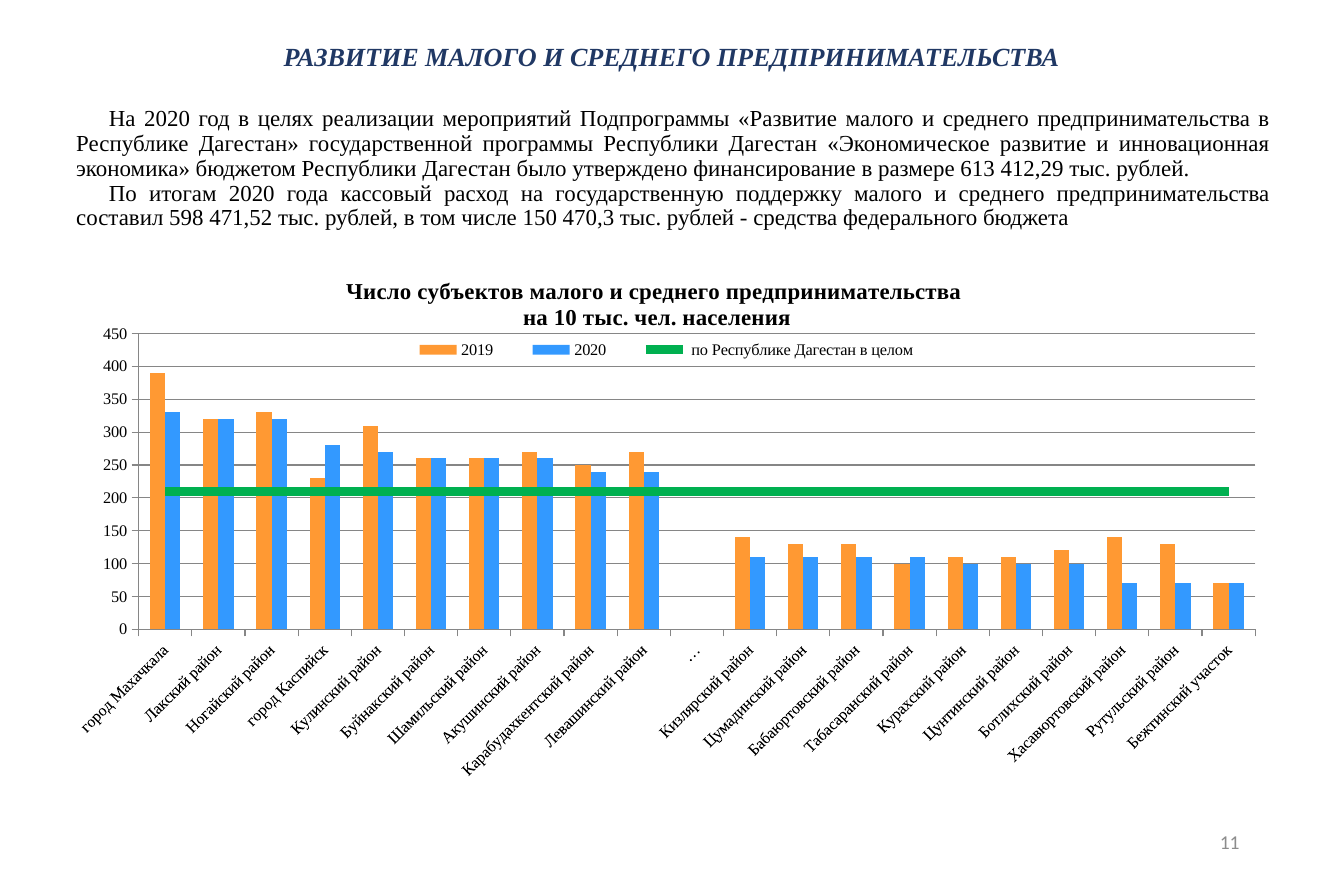
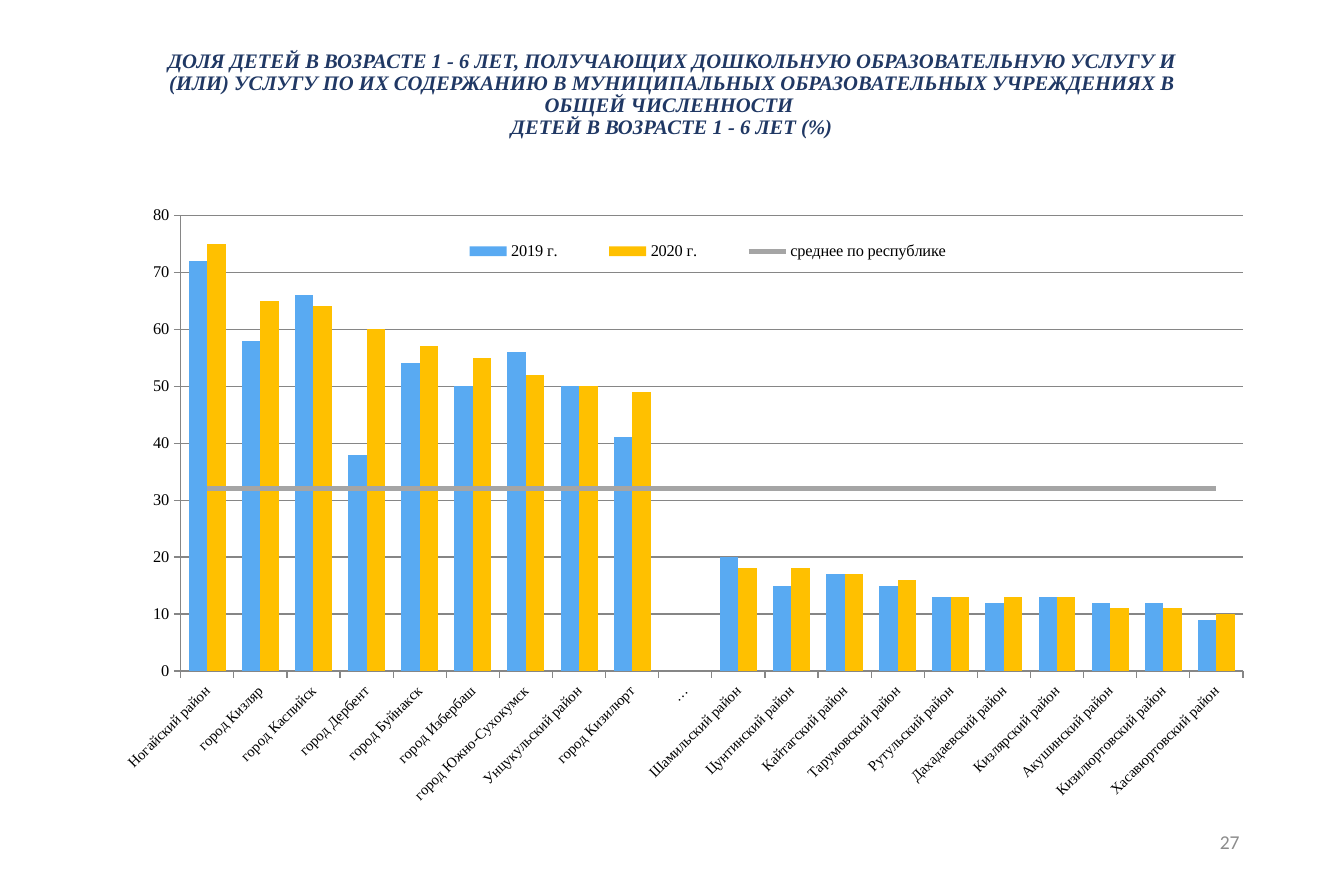
from pptx import Presentation
from pptx.chart.data import CategoryChartData
from pptx.dml.color import RGBColor
from pptx.enum.chart import XL_CHART_TYPE, XL_LEGEND_POSITION, XL_MARKER_STYLE, XL_TICK_MARK
from pptx.enum.text import MSO_ANCHOR, PP_ALIGN
from pptx.oxml import parse_xml
from pptx.oxml.ns import nsdecls
from pptx.util import Pt

# Shared look
SERIF, SANS = "Times New Roman", "Calibri"
NAVY, BLACK, GREY, GRID = "203864", "000000", "8C8C8C", "868686"
NUMBER_BOX = (580, 500.5, 185.5, 28.5)

# Content: boxes are left, top, width, height in points;
# plot and legend are left, top, width, height as shares of the chart
SLIDES = [
    {
        "number": "11",
        "title": ["РАЗВИТИЕ МАЛОГО И СРЕДНЕГО ПРЕДПРИНИМАТЕЛЬСТВА"],
        "title_box": (167, 16.5, 488, 38), "title_size": 16, "title_inset": 5,
        "body": [
            "На 2020 год в целях реализации мероприятий Подпрограммы «Развитие малого и среднего "
            "предпринимательства в Республике Дагестан» государственной программы Республики Дагестан "
            "«Экономическое развитие и инновационная экономика» бюджетом Республики Дагестан было "
            "утверждено финансирование в размере 613 412,29 тыс. рублей. ",
            "По итогам 2020 года кассовый расход на государственную поддержку малого и среднего "
            "предпринимательства составил 598 471,52 тыс. рублей, в том числе 150 470,3 тыс. рублей - "
            "средства федерального бюджета ",
        ],
        "chart": {
            "box": (34, 162.5, 747.5, 314), "plot": (0.068, 0.133, 0.914, 0.58),
            "legend": (0.27, 0.135, 0.46, 0.06),
            "heading": ["Число субъектов малого и среднего предпринимательства ",
                        "на 10 тыс. чел. населения"],
            "heading_at": (0.235, 0.014),
            "gap": 150, "top": 450, "step": 50, "label_size": 10, "line_width": 5.5,
            "colors": ["FF9933", "3399FF", "00B050"],
            "names": ["2019", "2020", " по Республике Дагестан в целом"],
            "average": 210,
            "rows": [
                ("город Махачкала", 390, 330), ("Лакский район", 320, 320),
                ("Ногайский район", 330, 320), ("город Каспийск", 230, 280),
                ("Кулинский район", 310, 270), ("Буйнакский район", 260, 260),
                ("Шамильский район", 260, 260), ("Акушинский район", 270, 260),
                ("Карабудахкентский район", 250, 240), ("Левашинский район", 270, 240),
                ("…", None, None),
                ("Кизлярский район", 140, 110), ("Цумадинский район", 130, 110),
                ("Бабаюртовский район", 130, 110), ("Табасаранский район", 100, 110),
                ("Курахский район", 110, 100), ("Цунтинский район", 110, 100),
                ("Ботлихский район", 120, 100), ("Хасавюртовский район", 140, 70),
                ("Рутульский район", 130, 70), ("Бежтинский участок", 70, 70),
            ],
        },
    },
    {
        "number": "27",
        "title": ["ДОЛЯ ДЕТЕЙ В ВОЗРАСТЕ 1 - 6 ЛЕТ, ПОЛУЧАЮЩИХ ДОШКОЛЬНУЮ ОБРАЗОВАТЕЛЬНУЮ УСЛУГУ И "
                  "(ИЛИ) УСЛУГУ ПО ИХ СОДЕРЖАНИЮ В МУНИЦИПАЛЬНЫХ ОБРАЗОВАТЕЛЬНЫХ УЧРЕЖДЕНИЯХ В "
                  "ОБЩЕЙ ЧИСЛЕННОСТИ ",
                  "ДЕТЕЙ В ВОЗРАСТЕ 1 - 6 ЛЕТ (%)"],
        "title_box": (88.5, 28, 644.5, 60), "title_size": 12.6, "title_inset": 7.2,
        "body": [],
        "chart": {
            "box": (49, 119, 724.5, 396), "plot": (0.085, 0.032, 0.897, 0.704),
            "legend": (0.29, 0.06, 0.48, 0.055),
            "heading": [], "heading_at": None,
            "gap": 88, "top": 80, "step": 10, "label_size": 9, "line_width": 3,
            "colors": ["59AAF2", "FFC000", "A5A5A5"],
            "names": ["2019 г.", "2020 г.", "среднее по республике"],
            "average": 32,
            "rows": [
                ("Ногайский район", 72, 75), ("город Кизляр", 58, 65),
                ("город Каспийск", 66, 64), ("город Дербент", 38, 60),
                ("город Буйнакск", 54, 57), ("город Избербаш", 50, 55),
                ("город Южно-Сухокумск", 56, 52), ("Унцукульский район", 50, 50),
                ("город Кизилюрт", 41, 49), ("…", None, None),
                ("Шамильский район", 20, 18), ("Цунтинский район", 15, 18),
                ("Кайтагский район", 17, 17), ("Тарумовский район", 15, 16),
                ("Рутульский район", 13, 13), ("Дахадаевский район", 12, 13),
                ("Кизлярский район", 13, 13), ("Акушинский район", 12, 11),
                ("Кизилюртовский район", 12, 11), ("Хасавюртовский район", 9, 10),
            ],
        },
    },
]


def rgb(value):
    return RGBColor.from_string(value)


def style_font(font, size, color=BLACK, name=SERIF, bold=False, italic=False):
    font.size, font.name, font.bold, font.italic = Pt(size), name, bold, italic
    font.color.rgb = rgb(color)


def add_text(page, place, paragraphs, align, inset=(7.2, 3.6), anchor=MSO_ANCHOR.MIDDLE,
             spacing=0.9, indent=0, **look):
    """Each paragraph is a list of lines split by line breaks."""
    box = page.shapes.add_textbox(*map(Pt, place))
    frame = box.text_frame
    frame.word_wrap = True
    frame.vertical_anchor = anchor
    frame.margin_left = frame.margin_right = Pt(inset[0])
    frame.margin_top = frame.margin_bottom = Pt(inset[1])
    for index, lines in enumerate(paragraphs):
        para = frame.add_paragraph() if index else frame.paragraphs[0]
        para.alignment, para.line_spacing = align, spacing
        if indent:
            para._p.get_or_add_pPr().set("indent", str(Pt(indent)))
        for position, line in enumerate(lines):
            if position:
                para.add_line_break()
            span = para.add_run()
            span.text = line
            style_font(span.font, **look)


def manual_layout(place, inner=False):
    target = '<c:layoutTarget val="inner"/>' if inner else ""
    modes = '<c:xMode val="edge"/><c:yMode val="edge"/>'
    sizes = "".join(f'<c:{key} val="{value}"/>' for key, value in zip("xywh", place))
    return parse_xml(f'<c:layout {nsdecls("c")}><c:manualLayout>{target}{modes}{sizes}'
                     '</c:manualLayout></c:layout>')


def set_layout(parent, layout, after=None):
    for old in parent.xpath("./c:layout"):
        parent.remove(old)
    if after is None:
        parent.insert(0, layout)
    else:
        after.addnext(layout)


def move_last_series_to_line(chart):
    bars = chart.element.xpath("//c:barChart")[0]
    series = bars.xpath("./c:ser")[-1]
    for flag in series.xpath("./c:invertIfNegative"):
        series.remove(flag)
    axes = "".join(f'<c:axId val="{value}"/>' for value in bars.xpath("./c:axId/@val"))
    lines = parse_xml(f'<c:lineChart {nsdecls("c")}><c:grouping val="standard"/>'
                      f'<c:varyColors val="0"/><c:marker val="1"/>{axes}</c:lineChart>')
    lines.insert(2, series)
    bars.addnext(lines)


def add_combined_chart(page, info):
    labels, before, after = zip(*info["rows"])
    data = CategoryChartData()
    data.categories = labels
    for name, values in zip(info["names"], (before, after, [info["average"]] * len(labels))):
        data.add_series(name, values)
    chart = page.shapes.add_chart(XL_CHART_TYPE.COLUMN_CLUSTERED, *map(Pt, info["box"]), data).chart
    style_font(chart.font, 10)

    # Columns and the average line
    move_last_series_to_line(chart)
    columns, average = chart.plots
    columns.gap_width, columns.overlap, columns.vary_by_categories = info["gap"], 0, False
    for series, color in zip(columns.series, info["colors"]):
        series.format.fill.solid()
        series.format.fill.fore_color.rgb = rgb(color)
    line = average.series[0]
    line.smooth = False
    line.marker.style = XL_MARKER_STYLE.NONE
    line.format.line.color.rgb = rgb(info["colors"][2])
    line.format.line.width = Pt(info["line_width"])

    # Axes
    scale, names = chart.value_axis, chart.category_axis
    scale.minimum_scale, scale.maximum_scale, scale.major_unit = 0, info["top"], info["step"]
    scale.has_major_gridlines = True
    for axis, size in ((scale, 10), (names, info["label_size"])):
        axis.major_tick_mark = XL_TICK_MARK.OUTSIDE
        axis.format.line.color.rgb = rgb(GRID)
        style_font(axis.tick_labels.font, size)
    scale.major_gridlines.format.line.color.rgb = rgb(GRID)
    scale.major_gridlines.format.line.width = Pt(0.75)
    chart.element.xpath("//c:catAx/c:txPr/a:bodyPr")[0].set("rot", "-2700000")

    # Legend, heading and plot area
    chart.has_legend = True
    chart.legend.position = XL_LEGEND_POSITION.TOP
    chart.legend.include_in_layout = False
    style_font(chart.legend.font, 10)
    legend = chart.element.xpath("//c:legend")[0]
    set_layout(legend, manual_layout(info["legend"]), legend.xpath("./c:legendPos")[0])
    set_layout(chart.element.xpath("//c:plotArea")[0], manual_layout(info["plot"], inner=True))
    chart.has_title = bool(info["heading"])
    if chart.has_title:
        frame = chart.chart_title.text_frame
        for index, text in enumerate(info["heading"]):
            para = frame.add_paragraph() if index else frame.paragraphs[0]
            para.alignment = PP_ALIGN.CENTER
            span = para.add_run()
            span.text = text
            style_font(span.font, 14, bold=True)
        title = chart.element.xpath("//c:chart/c:title")[0]
        set_layout(title, manual_layout(info["heading_at"]), title.xpath("./c:tx")[0])


def main():
    deck = Presentation()
    deck.slide_width, deck.slide_height = Pt(822.24), Pt(540)
    for info in SLIDES:
        page = deck.slides.add_slide(deck.slide_layouts[6])
        add_combined_chart(page, info["chart"])
        add_text(page, info["title_box"], [info["title"]], PP_ALIGN.CENTER,
                 inset=(info["title_inset"], 2.5), size=info["title_size"], color=NAVY,
                 bold=True, italic=True)
        if info["body"]:
            add_text(page, (43, 63.5, 738, 78.5), [[text] for text in info["body"]],
                     PP_ALIGN.JUSTIFY, inset=(3.6, 2), anchor=MSO_ANCHOR.TOP, indent=20, size=14)
        add_text(page, NUMBER_BOX, [[info["number"]]], PP_ALIGN.RIGHT, spacing=1,
                 size=12, color=GREY, name=SANS)
    deck.save("out.pptx")


if __name__ == "__main__":
    main()
